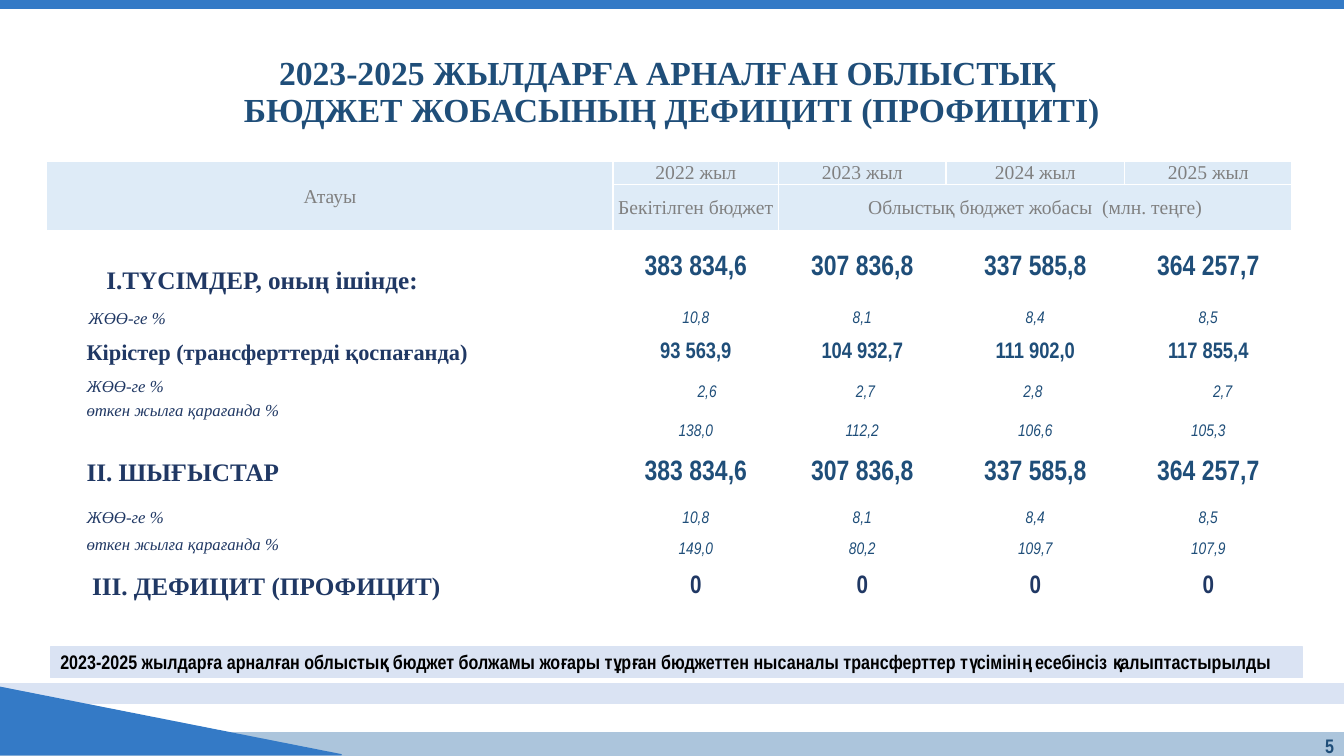
from lxml import etree
from pptx import Presentation
from pptx.dml.color import RGBColor
from pptx.enum.shapes import MSO_SHAPE
from pptx.enum.text import MSO_ANCHOR, MSO_AUTO_SIZE, PP_ALIGN
from pptx.oxml.ns import qn
from pptx.util import Cm, Pt

RECT, WEDGE = MSO_SHAPE.RECTANGLE, MSO_SHAPE.RIGHT_TRIANGLE
LEFT, MID, RIGHT = PP_ALIGN.LEFT, PP_ALIGN.CENTER, PP_ALIGN.RIGHT
TOP, CENTER, LOW = MSO_ANCHOR.TOP, MSO_ANCHOR.MIDDLE, MSO_ANCHOR.BOTTOM
NO_FIT = MSO_AUTO_SIZE.NONE

SERIF, NARROW = "Times New Roman", "Arial Narrow"
NAVY, BLUE, GREY = "203864", "1F4E79", "808080"
SKY, STEEL, PALE, ICE = "347AC6", "ACC5DC", "DAE3F3", "DEEBF7"

WIDTHS = (14.27, 4.17, 4.22, 4.5, 4.22)
HEIGHTS = (0.58, 1.17, 1.85, 0.74, 0.97, 0.74, 0.99, 1.63, 0.66, 0.66, 1.47, 0.53)
YEARS = (2022, 2023, 2024, 2025)
TOTAL = ("383 834,6", "307 836,8", "337 585,8", "364 257,7")
SHARE = ("10,8", "8,1", "8,4", "8,5")
GDP, GROWTH = "ЖӨӨ-ге %", "өткен жылға қарағанда %"
SHIFTS = (2.13, 1.95, 1.95, 2.23)

# label, its left inset, its size, values, their size, their anchor
ROWS = (
    ("ТҮСІМДЕР, оның ішінде:", 0, 18, TOTAL, 20, CENTER),
    (GDP, 1.05, 12, SHARE, 12, CENTER),
    ("Кірістер (трансферттерді қоспағанда)", 1, 16,
     ("93 563,9", "104 932,7", "111 902,0", "117 855,4"), 16, CENTER),
    (GDP, 1, 12, ("2,6", "2,7", "2,8", "2,7"), 12, LOW),
    (GROWTH, 1, 12, ("138,0", "112,2", "106,6", "105,3"), 12, LOW),
    ("II. ШЫҒЫСТАР", 1, 18, TOTAL, 20, CENTER),
    (GDP, 1, 12, SHARE, 12, CENTER),
    (GROWTH, 1, 12, ("149,0", "80,2", "109,7", "107,9"), 12, LOW),
    ("III. ДЕФИЦИТ (ПРОФИЦИТ)", 1.14, 18, ("0",) * 4, 18, CENTER),
)


def paint(target, color):
    """Give a fill or a line one solid colour."""
    target.solid()
    target.fore_color.rgb = RGBColor.from_string(color)


def write(para, text, size, face, color, bold=False, italic=False):
    run = para.add_run()
    run.text = text
    font = run.font
    font.size, font.name = Pt(size), face
    font.bold, font.italic = bold, italic
    font.color.rgb = RGBColor.from_string(color)


def block(slide, kind, box, color):
    shape = slide.shapes.add_shape(kind, *map(Cm, box))
    shape.shadow.inherit = False
    paint(shape.fill, color)
    paint(shape.line.fill, color)
    shape.line.width = Pt(1)
    return shape


def inset(cell, left=0.03, top=0.03, right=0.03):
    cell.margin_left, cell.margin_top = Cm(left), Cm(top)
    cell.margin_right, cell.margin_bottom = Cm(right), 0


def outline(cell):
    """Draw white borders; call this before the cell is filled."""
    props = cell._tc.get_or_add_tcPr()
    for side in ("a:lnL", "a:lnR", "a:lnT", "a:lnB"):
        line = etree.SubElement(props, qn(side), w=str(Pt(1)))
        fill = etree.SubElement(line, qn("a:solidFill"))
        etree.SubElement(fill, qn("a:srgbClr"), val="FFFFFF")


def number(para):
    """Number a paragraph with Roman numerals."""
    props = para._p.get_or_add_pPr()
    props.set("marL", str(Cm(1)))
    props.set("indent", str(Cm(0.5)))
    etree.SubElement(props, qn("a:buAutoNum"), type="romanUcPeriod")


def head(cell, text):
    inset(cell)
    cell.vertical_anchor = CENTER
    para = cell.text_frame.paragraphs[0]
    para.alignment = MID
    write(para, text, 14, SERIF, GREY)


def label(cell, text, left, size):
    inset(cell, left, 0, 0)
    cell.vertical_anchor = CENTER
    small = size == 12
    write(cell.text_frame.paragraphs[0], text, size, SERIF, NAVY, not small, small)


def value(cell, text, size, anchor):
    inset(cell)
    cell.vertical_anchor = anchor
    para = cell.text_frame.paragraphs[0]
    para.alignment = MID
    small = size == 12
    color = NAVY if size == 18 else BLUE
    write(para, text, size, NARROW, color, not small, small)


def budget(slide):
    """Add the budget table."""
    frame = slide.shapes.add_table(
        len(HEIGHTS), len(WIDTHS), Cm(1.18), Cm(4.06),
        Cm(sum(WIDTHS)), Cm(sum(HEIGHTS)))
    table = frame.table
    table.first_row = table.horz_banding = False
    for col, width in zip(table.columns, WIDTHS):
        col.width = Cm(width)
    for row, height in zip(table.rows, HEIGHTS):
        row.height = Cm(height)

    for i, row in enumerate(table.rows):
        for cell in row.cells:
            if i < 2:
                outline(cell)
                paint(cell.fill, ICE)
            else:
                cell.fill.background()
    table.cell(0, 0).merge(table.cell(1, 0))
    table.cell(1, 2).merge(table.cell(1, 4))
    head(table.cell(0, 0), "Атауы")
    for j, year in enumerate(YEARS, 1):
        head(table.cell(0, j), f"{year} жыл")
    head(table.cell(1, 1), "Бекітілген бюджет")
    head(table.cell(1, 2), "Облыстық бюджет жобасы  (млн. теңге)")

    for i, (text, left, size, values, big, anchor) in enumerate(ROWS, 2):
        label(table.cell(i, 0), text, left, size)
        for j, item in enumerate(values, 1):
            value(table.cell(i, j), item, big, anchor)

    first = table.cell(2, 0)
    first.margin_top = Cm(0.7)
    number(first.text_frame.paragraphs[0])
    table.cell(6, 0).vertical_anchor = TOP
    for j, shift in enumerate(SHIFTS, 1):
        cell = table.cell(5, j)
        cell.margin_left = Cm(shift)
        cell.text_frame.paragraphs[0].alignment = LEFT
    for cell in table.rows[len(HEIGHTS) - 1].cells:
        inset(cell, 0, 0, 0)
        end = cell.text_frame.paragraphs[0]._p.get_or_add_endParaRPr()
        end.set("sz", "1000")


def heading(slide):
    title = slide.shapes.title
    title.left, title.top, title.width, title.height = map(
        Cm, (0.56, 1.75, 32.74, 1.19))
    frame = title.text_frame
    frame.auto_size, frame.word_wrap = NO_FIT, True
    frame.vertical_anchor = CENTER
    para = frame.paragraphs[0]
    para.alignment, para.line_spacing = MID, 0.9
    write(para, "2023-2025 ЖЫЛДАРҒА АРНАЛҒАН ОБЛЫСТЫҚ ", 24, SERIF, BLUE, True)
    para.add_line_break()
    write(para, "БЮДЖЕТ ЖОБАСЫНЫҢ ДЕФИЦИТІ (ПРОФИЦИТІ)", 24, SERIF, BLUE, True)


def caption(shape, text, align, color):
    frame = shape.text_frame
    frame.word_wrap = True
    frame.vertical_anchor = CENTER
    para = frame.paragraphs[0]
    para.alignment = align
    write(para, text, 14, NARROW, color, True)


def main():
    deck = Presentation()
    deck.slide_width, deck.slide_height = Cm(33.87), Cm(19.05)
    slide = deck.slides.add_slide(deck.slide_layouts[0])
    sub = slide.placeholders[1].element
    sub.getparent().remove(sub)

    block(slide, RECT, (0, 18.47, 33.87, 0.58), STEEL)
    block(slide, RECT, (0, 17.23, 33.87, 0.5), PALE)
    block(slide, WEDGE, (0, 17.32, 8.6, 1.7), SKY)
    block(slide, RECT, (0, -0.03, 33.87, 0.25), SKY)
    heading(slide)
    budget(slide)
    page = slide.shapes.add_textbox(Cm(32.05), Cm(18.43), Cm(1.82), Cm(0.7))
    caption(page, "5", RIGHT, BLUE)
    note = block(slide, RECT, (1.27, 16.3, 31.55, 0.77), PALE)
    caption(note, "2023-2025 жылдарға арналған облыстық бюджет болжамы жоғары "
            "тұрған бюджеттен нысаналы трансферттер түсімінің есебінсіз "
            "қалыптастырылды", LEFT, "000000")
    deck.save("out.pptx")


if __name__ == "__main__":
    main()
